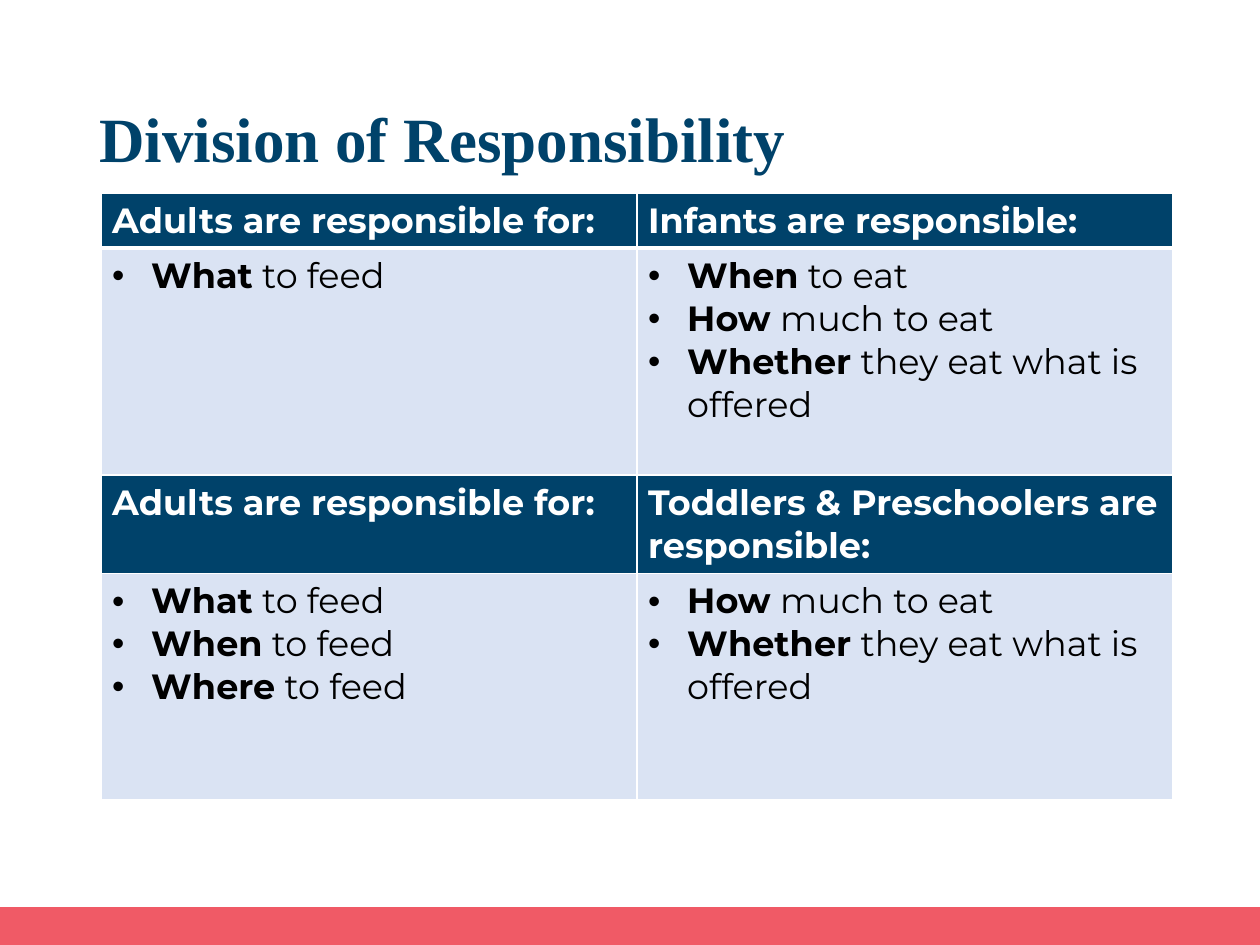
from lxml import etree
from pptx import Presentation
from pptx.dml.color import RGBColor
from pptx.enum.shapes import MSO_SHAPE
from pptx.enum.text import MSO_ANCHOR
from pptx.oxml.ns import qn
from pptx.util import Inches, Pt

RECTANGLE = MSO_SHAPE.RECTANGLE
MIDDLE = MSO_ANCHOR.MIDDLE
COLORS = {
    "navy": "00426A",
    "pale": "DAE3F3",
    "coral": "F05A66",
    "white": "FFFFFF",
    "black": "000000",
}
BODY_FONT = "Montserrat"
TITLE_FONT = "Times New Roman"
WIDTH, HEIGHT = 10, 7.5
ROW_HEIGHTS = [0.44, 1.8, 0.78, 1.8]
INDENT = 0.31

ADULTS = "Adults are responsible for:"
OFFERED = ("Whether", " they eat what is offered")
ROWS = [
    [ADULTS, "Infants are responsible:"],
    [
        [("What", " to feed")],
        [("When", " to eat"), ("How", " much to eat"), OFFERED],
    ],
    [ADULTS, "Toddlers & Preschoolers are responsible:"],
    [
        [("What", " to feed"), ("When", " to feed"), ("Where", " to feed")],
        [("How", " much to eat"), OFFERED],
    ],
]


def color(name):
    return RGBColor.from_string(COLORS[name])


def set_font(font, family, size, color_name):
    font.name = family
    font.size = Pt(size)
    font.color.rgb = color(color_name)


def add_bullet(paragraph):
    properties = paragraph._p.get_or_add_pPr()
    properties.set("marL", str(Inches(INDENT)))
    properties.set("indent", str(-Inches(INDENT)))
    etree.SubElement(properties, qn("a:buFont"), typeface="Arial")
    etree.SubElement(properties, qn("a:buChar"), char="•")


def add_borders(cell, widths):
    properties = cell._tc.get_or_add_tcPr()
    for side, width in zip("LRTB", widths):
        line = etree.SubElement(properties, qn(f"a:ln{side}"), w=str(Pt(width)))
        fill = etree.SubElement(line, qn("a:solidFill"))
        etree.SubElement(fill, qn("a:srgbClr"), val=COLORS["white"])


def fill_heading(cell, heading):
    paragraph = cell.text_frame.paragraphs[0]
    paragraph.text = heading
    set_font(paragraph.font, BODY_FONT, 20, "white")
    paragraph.font.bold = True


def fill_duties(cell, duties):
    frame = cell.text_frame
    for index, (keyword, detail) in enumerate(duties):
        paragraph = frame.add_paragraph() if index else frame.paragraphs[0]
        add_bullet(paragraph)
        set_font(paragraph.font, BODY_FONT, 20, "black")
        for text, bold in ((keyword, True), (detail, False)):
            run = paragraph.add_run()
            run.text = text
            run.font.bold = bold


def add_footer_band(slide, box):
    band = slide.shapes.add_shape(RECTANGLE, *map(Inches, box))
    band.shadow.inherit = False
    band.fill.solid()
    band.fill.fore_color.rgb = color("coral")
    band.line.fill.background()


def add_title(slide, box):
    frame = slide.shapes.add_textbox(*map(Inches, box)).text_frame
    frame.word_wrap = True
    frame.vertical_anchor = MIDDLE
    paragraph = frame.paragraphs[0]
    paragraph.text = "Division of Responsibility"
    paragraph.line_spacing = 0.9
    set_font(paragraph.font, TITLE_FONT, 36, "navy")
    paragraph.font.bold = True


def add_responsibility_table(slide, box):
    table = slide.shapes.add_table(len(ROWS), 2, *map(Inches, box)).table
    table.first_row = False
    table.horz_banding = False
    for row_index, (contents, height) in enumerate(zip(ROWS, ROW_HEIGHTS)):
        table.rows[row_index].height = Inches(height)
        top = 3 if row_index == 1 else 1
        bottom = 3 if row_index == 0 else 1
        for column, content in enumerate(contents):
            cell = table.cell(row_index, column)
            cell.margin_left = cell.margin_right = Inches(0.09)
            cell.margin_top = cell.margin_bottom = Inches(0.05)
            add_borders(cell, (1, 1, top, bottom))
            is_heading = row_index % 2 == 0
            cell.fill.solid()
            cell.fill.fore_color.rgb = color("navy" if is_heading else "pale")
            if is_heading:
                fill_heading(cell, content)
            else:
                fill_duties(cell, content)


def main():
    deck = Presentation()
    deck.slide_width, deck.slide_height = Inches(WIDTH), Inches(HEIGHT)
    slide = deck.slides.add_slide(deck.slide_layouts[6])
    band_height = HEIGHT * 0.04
    add_footer_band(slide, (0, HEIGHT - band_height, WIDTH, band_height))
    add_title(slide, (0.69, 0.4, 8.62, 1.45))
    add_responsibility_table(slide, (0.8, 1.53, 8.51, sum(ROW_HEIGHTS)))
    deck.save("out.pptx")


if __name__ == "__main__":
    main()
